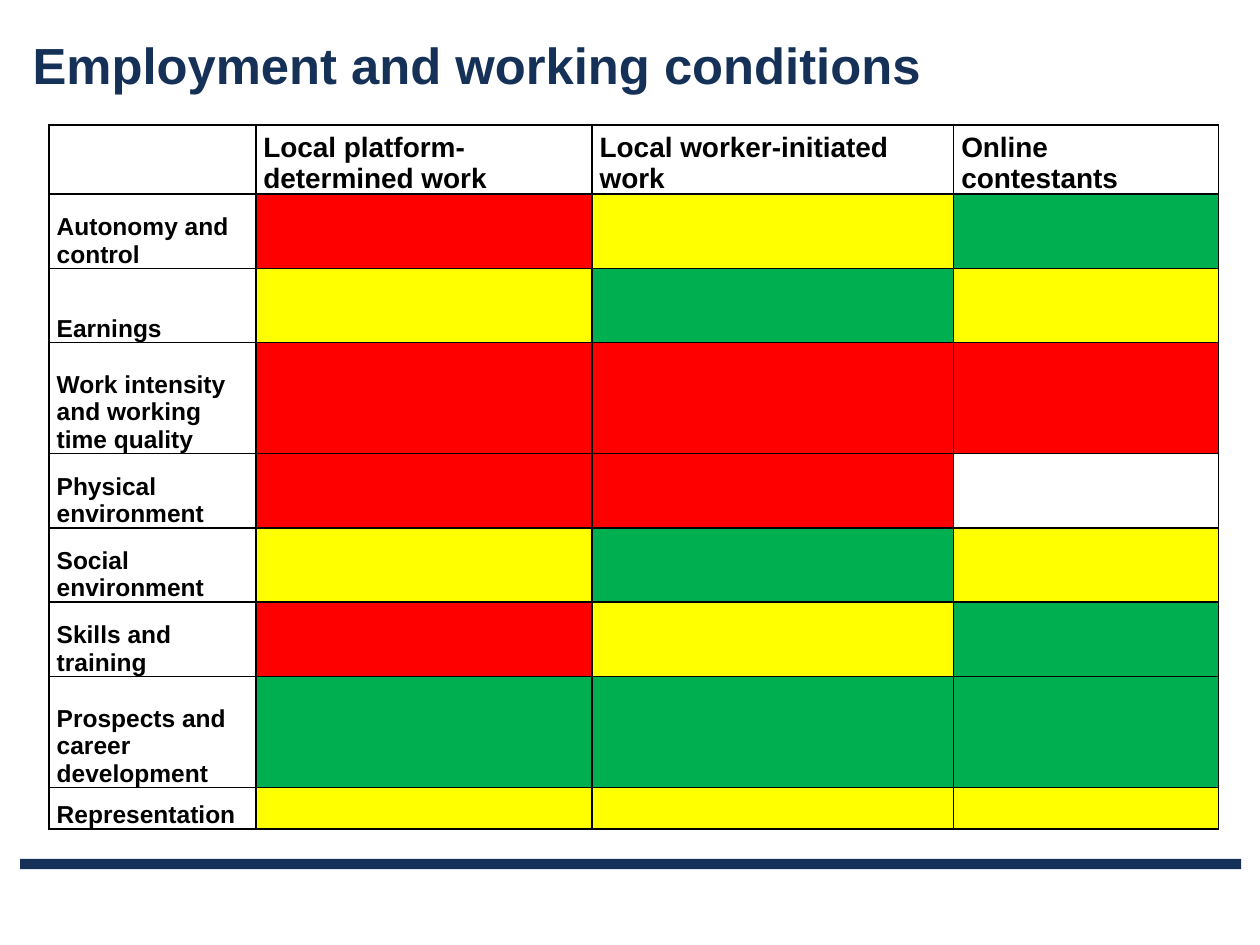
"""Build the slide rating employment and working conditions by platform type."""
from lxml.etree import SubElement
from pptx import Presentation
from pptx.dml.color import RGBColor
from pptx.enum.shapes import MSO_SHAPE
from pptx.enum.text import MSO_ANCHOR
from pptx.oxml.ns import qn
from pptx.util import Inches, Pt

THEME = {
    "font": "Arial", "title": 29, "head": 16, "label": 14, "line": 1,
    "navy": "163157", "text": "000000", "border": "000000",
    "R": "FF0000", "Y": "FFFF00", "G": "00B050", "W": "FFFFFF",
}
HEADS = ["", "Local platform-determined work", "Local worker-initiated work", "Online contestants"]
RATINGS = [
    ("Autonomy and control", "RYG"),
    ("Earnings", "YGY"),
    ("Work intensity and working time quality", "RRR"),
    ("Physical environment", "RRW"),
    ("Social environment", "YGY"),
    ("Skills and training", "RYG"),
    ("Prospects and career development", "GGG"),
    ("Representation", "YYY"),
]
COLS = [1.64, 2.67, 2.87, 2.1]
ROWS = [0.55, 0.59, 0.59, 0.88, 0.59, 0.59, 0.59, 0.88, 0.33]


def add_text(tf, text, size, color):
    r = tf.paragraphs[0].add_run()
    r.text = text
    r.font.name, r.font.size, r.font.bold = THEME["font"], Pt(size), True
    r.font.color.rgb = RGBColor.from_string(THEME[color])


def style_cell(cell, fill):
    cell.margin_left = cell.margin_right = Inches(0.06)
    cell.margin_top = cell.margin_bottom = 0
    cell.vertical_anchor = MSO_ANCHOR.BOTTOM
    tcPr = cell._tc.get_or_add_tcPr()
    for side in ("a:lnL", "a:lnR", "a:lnT", "a:lnB"):
        ln = SubElement(tcPr, qn(side), w=str(Pt(THEME["line"])))
        SubElement(SubElement(ln, qn("a:solidFill")), qn("a:srgbClr"), val=THEME["border"])
    cell.fill.solid()
    cell.fill.fore_color.rgb = RGBColor.from_string(THEME[fill])


prs = Presentation()
prs.slide_width, prs.slide_height = Inches(10), Inches(7.5)
W, H = prs.slide_width, prs.slide_height
s = prs.slides.add_slide(prs.slide_layouts[6])
left, width = int(W * 0.016), int(W * 0.969)

sp = s.shapes.add_shape(MSO_SHAPE.RECTANGLE, left, int(H * 0.909), width, Inches(0.08))
sp.shadow.inherit = False
sp.fill.solid()
sp.fill.fore_color.rgb = RGBColor.from_string(THEME["navy"])
sp.line.fill.background()

tf = s.shapes.add_textbox(left, int(H * 0.028), width, Inches(0.59)).text_frame
tf.word_wrap = True
tf.vertical_anchor = MSO_ANCHOR.BOTTOM
add_text(tf, "Employment and working conditions", THEME["title"], "navy")

table = s.shapes.add_table(len(ROWS), len(COLS), Inches(0.39), Inches(0.99),
                           Inches(sum(COLS)), Inches(sum(ROWS))).table
table.horz_banding = table.first_row = False
for col, w in zip(table.columns, COLS):
    col.width = Inches(w)
for row, h in zip(table.rows, ROWS):
    row.height = Inches(h)

fills = ["WWWW"] + ["W" + marks for _, marks in RATINGS]
for i, row_fills in enumerate(fills):
    for j, fill in enumerate(row_fills):
        style_cell(table.cell(i, j), fill)
for j, head in enumerate(HEADS[1:], 1):
    add_text(table.cell(0, j).text_frame, head, THEME["head"], "text")
for i, (label, _) in enumerate(RATINGS, 1):
    add_text(table.cell(i, 0).text_frame, label, THEME["label"], "text")

prs.save("out.pptx")
